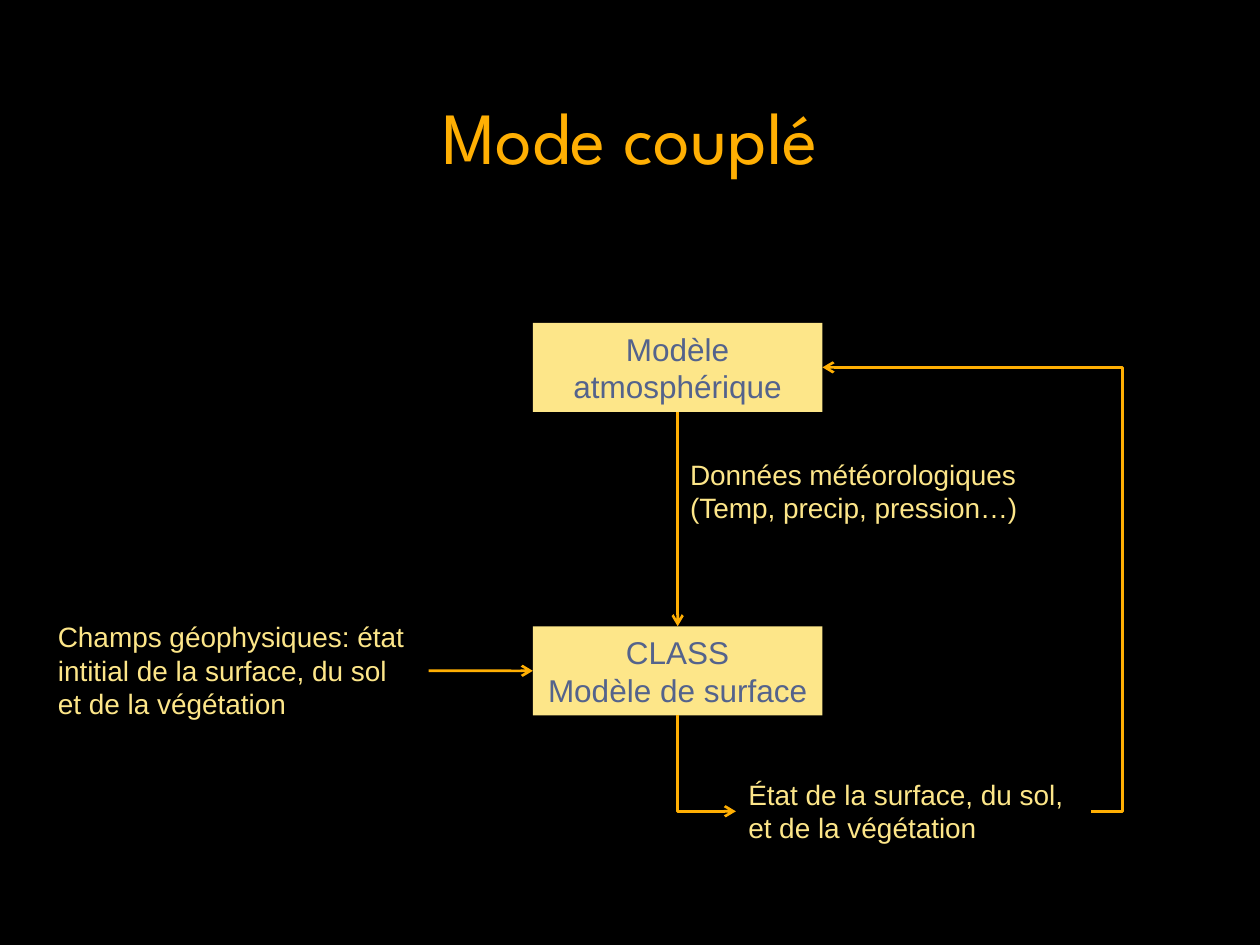
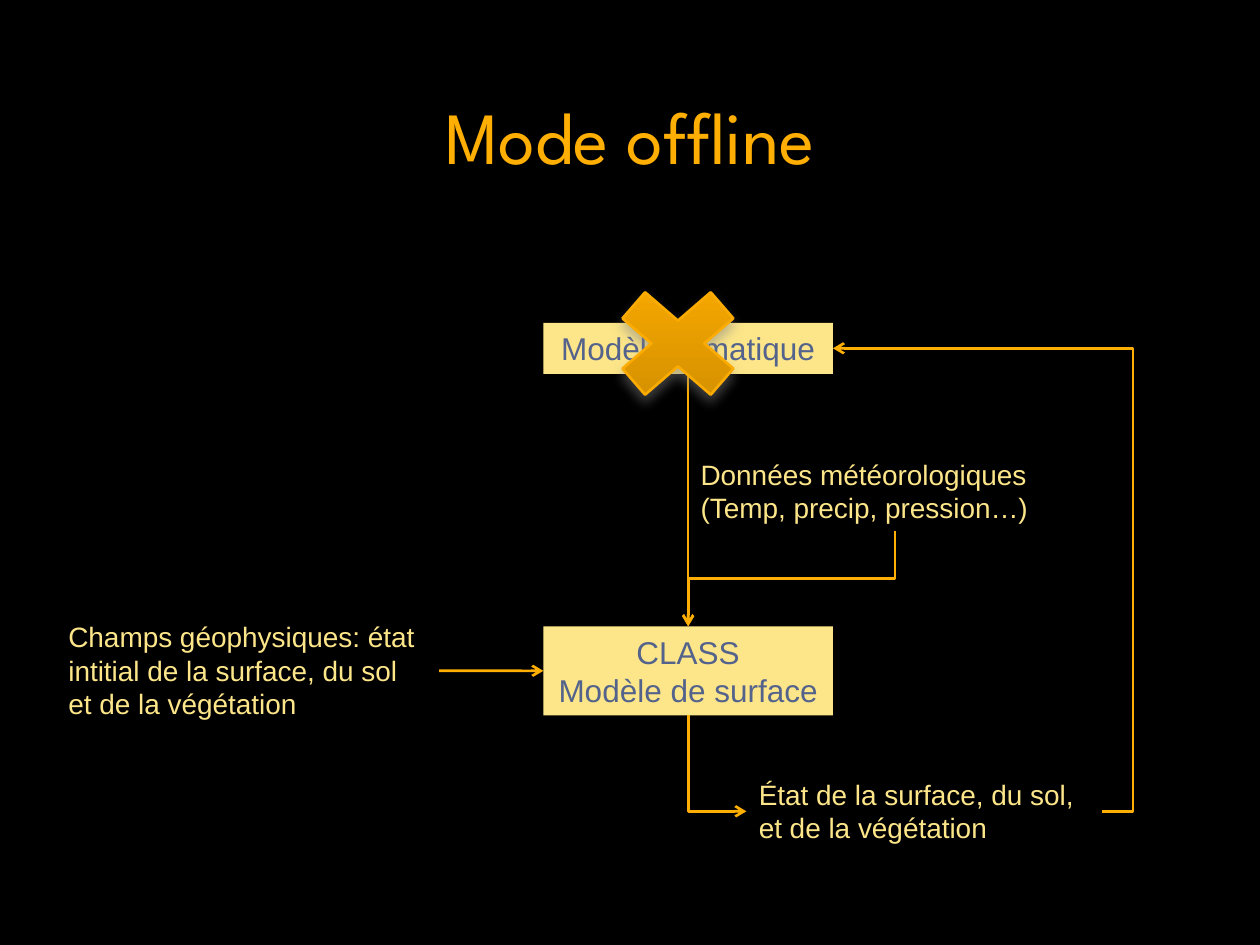
from dataclasses import dataclass, replace

from lxml.etree import SubElement
from pptx import Presentation
from pptx.dml.color import RGBColor
from pptx.enum.shapes import MSO_CONNECTOR, MSO_SHAPE
from pptx.enum.text import MSO_ANCHOR, PP_ALIGN
from pptx.oxml.ns import qn
from pptx.shapes.autoshape import Shape
from pptx.shapes.connector import Connector
from pptx.slide import Slide
from pptx.text.text import TextFrame
from pptx.util import Pt


@dataclass(frozen=True)
class Theme:
    back: str = "000000"
    gold: str = "FFAF03"
    cream: str = "FDE689"
    slate: str = "54638C"
    dark: str = "CF8D00"
    light: str = "FBAB00"
    edge: str = "FCAC00"
    shade: str = "808080"
    head: str = "League Spartan"
    body: str = "Arial"
    title: float = 42
    label: float = 18
    note: float = 16
    line: float = 1.5


@dataclass(frozen=True)
class Box:
    x: float
    y: float
    w: float
    h: float

    @property
    def top(self) -> tuple[float, float]:
        return self.x + self.w / 2, self.y

    @property
    def base(self) -> tuple[float, float]:
        return self.x + self.w / 2, self.y + self.h

    @property
    def left(self) -> tuple[float, float]:
        return self.x, self.y + self.h / 2

    @property
    def right(self) -> tuple[float, float]:
        return self.x + self.w, self.y + self.h / 2

    def points(self) -> tuple[int, ...]:
        return tuple(Pt(n) for n in (self.x, self.y, self.w, self.h))


@dataclass(frozen=True)
class Mode:
    title: str
    model: str
    height: float
    shift: float
    cut: bool


THEME = Theme()
TITLE = Box(48, 46, 624, 62)
MODEL = Box(304.5, 184.5, 165.5, 50.9)
CLASS = replace(MODEL, y=357.9)
DATA = Box(387.25, 257.6, 236.25, 46)
STATE = Box(420.5, 440.6, 203, 46)
FIELDS = Box(26, 350.5, 219, 65.6)
CROSS = Box(338.9, 154.3, 97, 84)
MODES = (
    Mode("Mode couplé", "Modèle atmosphérique", 50.9, 0, False),
    Mode("Mode offline", "Modèle climatique", 29.1, 6, True),
)


def rgb(code: str) -> RGBColor:
    return RGBColor.from_string(code)


def write(frame: TextFrame, text: str, *, size: float, color: str,
          font: str = THEME.body, align: PP_ALIGN = PP_ALIGN.LEFT,
          anchor: MSO_ANCHOR = MSO_ANCHOR.TOP) -> None:
    frame.text = text
    frame.word_wrap = True
    frame.vertical_anchor = anchor
    for para in frame.paragraphs:
        para.alignment = align
        para.font.size = Pt(size)
        para.font.name = font
        para.font.color.rgb = rgb(color)


def add_title(slide: Slide, text: str) -> None:
    title = slide.shapes.title
    title.left, title.top, title.width, title.height = TITLE.points()
    write(title.text_frame, text, size=THEME.title, color=THEME.gold,
          font=THEME.head, align=PP_ALIGN.CENTER, anchor=MSO_ANCHOR.MIDDLE)


def add_model(slide: Slide, box: Box, text: str) -> Shape:
    shape = slide.shapes.add_shape(MSO_SHAPE.RECTANGLE, *box.points())
    shape.shadow.inherit = False
    shape.fill.solid()
    shape.fill.fore_color.rgb = rgb(THEME.cream)
    shape.line.fill.background()
    write(shape.text_frame, text, size=THEME.label, color=THEME.slate,
          align=PP_ALIGN.CENTER, anchor=MSO_ANCHOR.MIDDLE)
    return shape


def add_note(slide: Slide, box: Box, text: str) -> Shape:
    note = slide.shapes.add_textbox(*box.points())
    write(note.text_frame, text, size=THEME.note, color=THEME.cream)
    return note


def add_link(slide: Slide, start: tuple[float, float],
             end: tuple[float, float],
             kind: MSO_CONNECTOR = MSO_CONNECTOR.STRAIGHT) -> Connector:
    ends = (Pt(n) for n in (*start, *end))
    link = slide.shapes.add_connector(kind, *ends)
    link.line.color.rgb = rgb(THEME.gold)
    link.line.width = Pt(THEME.line)
    props = link.element.spPr
    SubElement(props.find(qn("a:ln")), qn("a:tailEnd"), type="arrow")
    SubElement(props, qn("a:effectLst"))
    return link


def join(slide: Slide, start: Shape, exit: int, end: Shape, entry: int) -> None:
    link = add_link(slide, (0, 0), (0, 0))
    link.begin_connect(start, exit)
    link.end_connect(end, entry)


def add_drop(slide: Slide, start: tuple[float, float],
             end: tuple[float, float], preset: str) -> None:
    (x1, y1), (x2, y2) = start, end
    mid_x, mid_y = (x1 + x2) / 2, (y1 + y2) / 2
    side = 1 if x1 > x2 else -1
    half_w, half_h = side * (y2 - y1) / 2, abs(x2 - x1) / 2
    link = add_link(slide, (mid_x - half_w, mid_y - half_h),
                    (mid_x + half_w, mid_y + half_h), MSO_CONNECTOR.ELBOW)
    props = link.element.spPr
    props.find(qn("a:xfrm")).set("rot", str(side * 90 % 360 * 60000))
    props.find(qn("a:prstGeom")).set("prst", preset)


def add_loop(slide: Slide, start: tuple[float, float],
             end: tuple[float, float]) -> None:
    link = add_link(slide, start, end, MSO_CONNECTOR.ELBOW)
    guides = link.element.spPr.find(qn("a:prstGeom")).find(qn("a:avLst"))
    SubElement(guides, qn("a:gd"), name="adj1", fmla="val -11700")


def add_cross(slide: Slide) -> None:
    cross = slide.shapes.add_shape(MSO_SHAPE.MATH_MULTIPLY, *CROSS.points())
    cross.fill.gradient()
    cross.fill.gradient_angle = 90
    for stop, color in zip(cross.fill.gradient_stops, (THEME.dark, THEME.light)):
        stop.color.rgb = rgb(color)
    cross.line.color.rgb = rgb(THEME.edge)
    cross.line.width = Pt(THEME.line)
    cross.shadow.inherit = False
    shade = SubElement(cross.element.spPr.find(qn("a:effectLst")),
                       qn("a:outerShdw"), blurRad=str(Pt(7)),
                       dist=str(Pt(4)), dir="5400000", rotWithShape="0")
    color = SubElement(shade, qn("a:srgbClr"), val=THEME.shade)
    SubElement(color, qn("a:alpha"), val="50000")


def draw(slide: Slide, mode: Mode) -> None:
    add_title(slide, mode.title)
    top, core, data, state, fields = (
        replace(box, x=box.x + mode.shift)
        for box in (MODEL, CLASS, DATA, STATE, FIELDS))
    top = replace(top, h=mode.height)
    surface = add_model(slide, core, "CLASS\nModèle de surface")
    model = add_model(slide, top, mode.model)
    add_note(slide, data, "Données météorologiques (Temp, precip, pression…)")
    join(slide, model, 2, surface, 0)
    add_note(slide, state, "État de la surface, du sol, et de la végétation")
    add_drop(slide, core.base, state.left, "bentConnector2")
    source = add_note(slide, fields, "Champs géophysiques: état intitial "
                      "de la surface, du sol et de la végétation")
    join(slide, source, 3, surface, 1)
    if mode.cut:
        add_cross(slide)
        add_drop(slide, data.base, core.top, "bentConnector3")
    add_loop(slide, state.right, top.right)


def main() -> None:
    deck = Presentation()
    deck.slide_width, deck.slide_height = Pt(720), Pt(540)
    back = deck.slide_master.background.fill
    back.solid()
    back.fore_color.rgb = rgb(THEME.back)
    for mode in MODES:
        draw(deck.slides.add_slide(deck.slide_layouts[5]), mode)
    deck.save("out.pptx")


if __name__ == "__main__":
    main()
